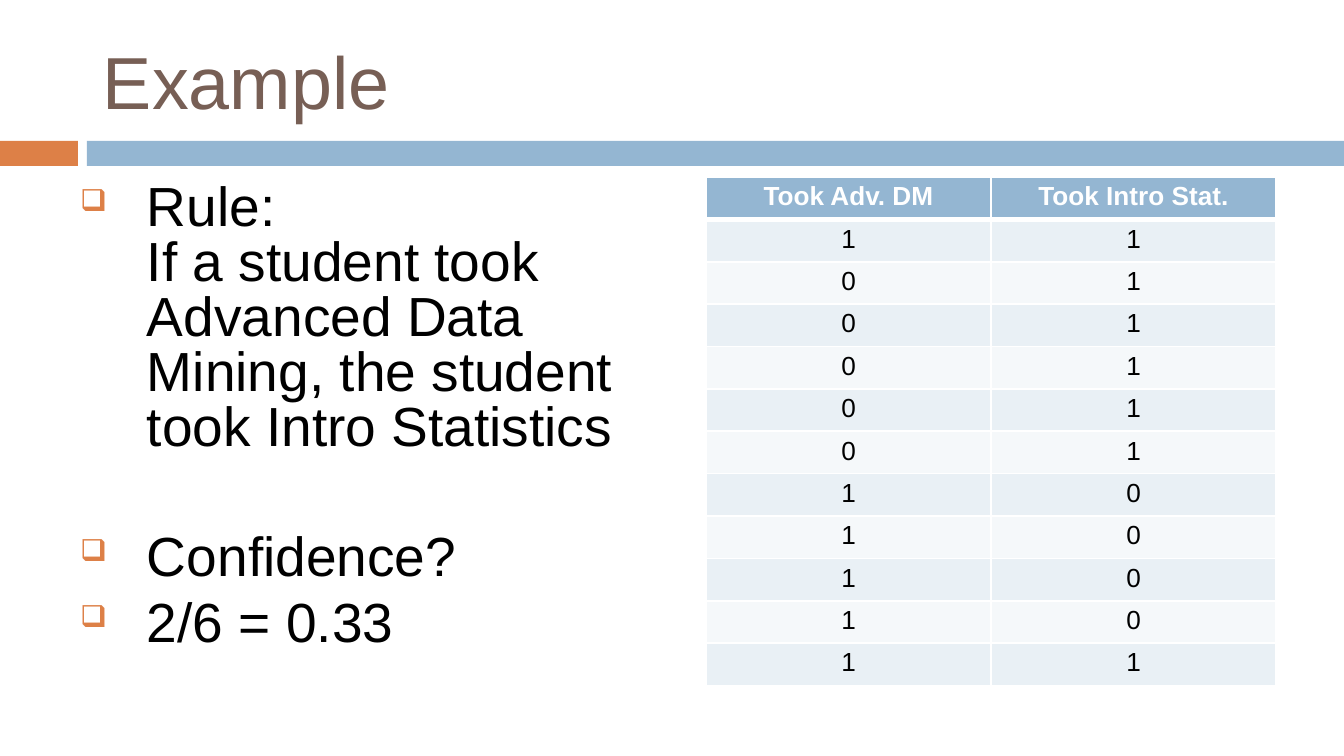
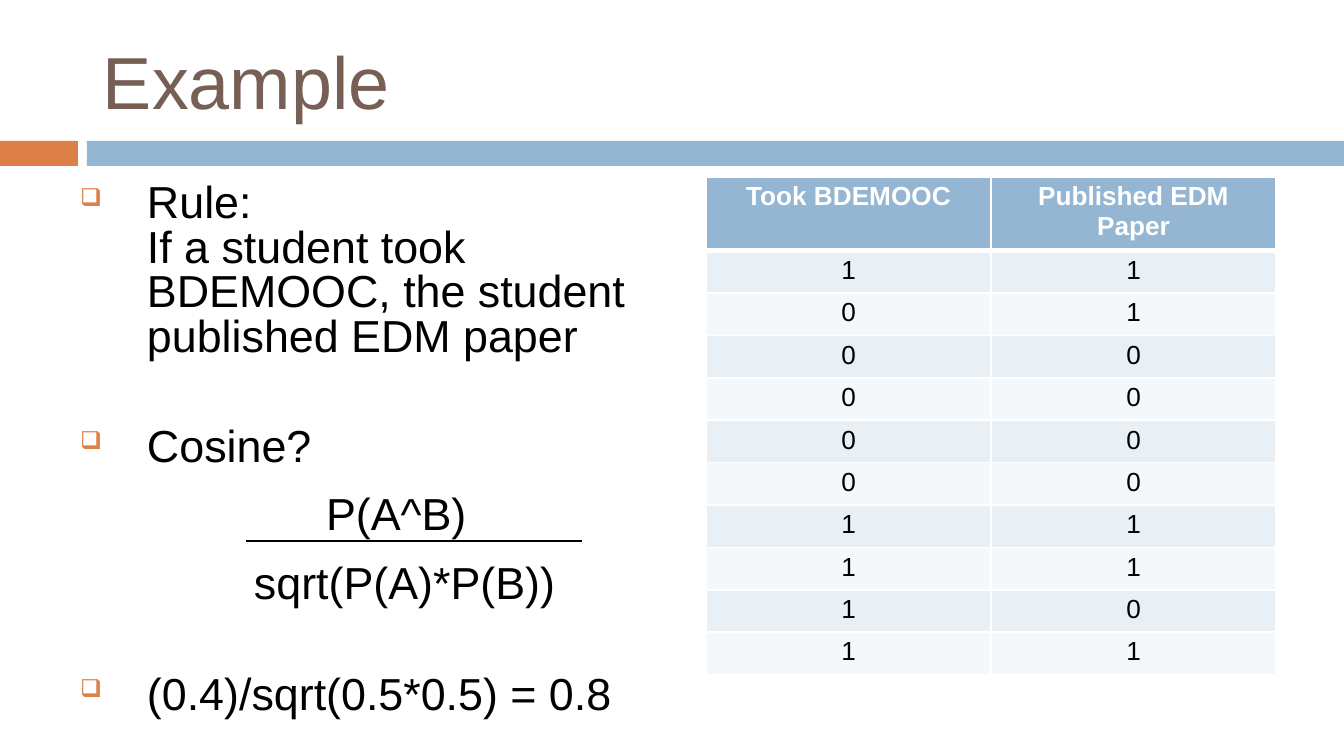
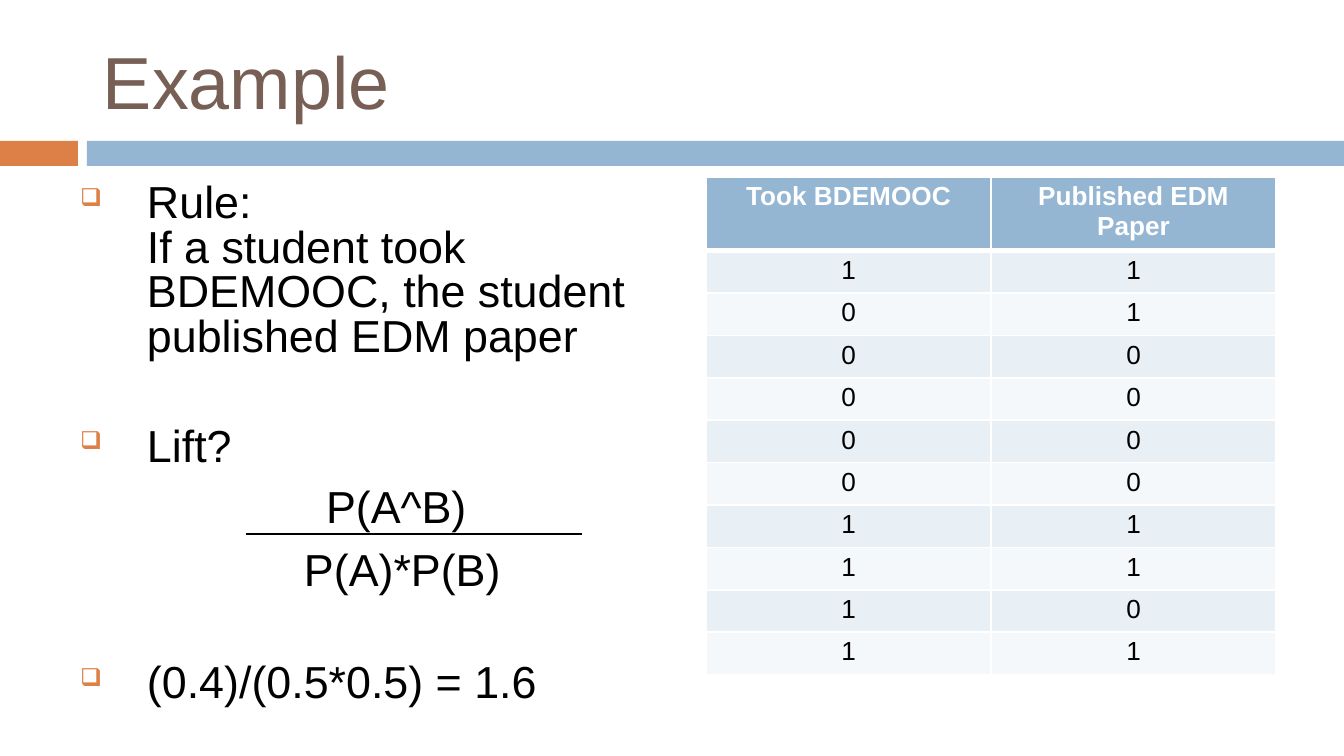
import lxml.etree
import pptx
import pptx.dml.color
import pptx.enum.shapes
import pptx.enum.text
import pptx.oxml.ns
import pptx.util

SCALE = 914400 / 134.4
FONT = "Arial"
BLUE, ORANGE, BROWN = "94B6D2", "DD8047", "775F55"
WHITE, BLACK = "FFFFFF", "000000"
BANDS = ("F5F8FA", "E9F0F5")
LEAD = 0.83
TEXT_PAD = (13, 7)
CELL_PAD = (13, 5, 13, 6)

COURSES = [(1, 1)] + [(0, 1)] * 5 + [(1, 0)] * 4 + [(1, 1)]
PAPERS = [(1, 1), (0, 1)] + [(0, 0)] * 4 + [(1, 1), (1, 1), (1, 0), (1, 1)]
PAPER_HEAD = ("Took BDEMOOC", "Published EDM Paper")
PAPER_RULE = "Rule:\nIf a student took BDEMOOC, the student published EDM paper"


def px(n):
    return pptx.util.Emu(round(n * SCALE))


def rgb(code):
    return pptx.dml.color.RGBColor.from_string(code)


def add_xml(parent, tag, **attrs):
    return lxml.etree.SubElement(parent, pptx.oxml.ns.qn(tag), attrs)


def write(para, text, size=24, color=BLACK, bold=False, center=False,
          lead=None, before=0, left=0, bullet=False):
    """Fill a paragraph; before and left are in px."""
    para.text = text
    para.space_before = px(before)
    if lead:
        para.line_spacing = lead
    if center:
        para.alignment = pptx.enum.text.PP_ALIGN.CENTER
    for run in para.runs:
        run.font.name = FONT
        run.font.size = pptx.util.Pt(size)
        run.font.bold = bold
        run.font.color.rgb = rgb(color)
    props = para._p.get_or_add_pPr()
    props.set("marL", str(px(left)))
    props.set("indent", str(px(-left if bullet else 0)))
    if bullet:
        add_xml(add_xml(props, "a:buClr"), "a:srgbClr", val=ORANGE)
        add_xml(props, "a:buSzPct", val="55000")
        add_xml(props, "a:buChar", char="❑")


def add_text(slide, box, items, middle=False):
    """Add a text box with one paragraph for each (text, format) item."""
    frame = slide.shapes.add_textbox(*map(px, box)).text_frame
    frame.word_wrap = True
    frame.margin_left = frame.margin_right = px(TEXT_PAD[0])
    frame.margin_top = frame.margin_bottom = px(TEXT_PAD[1])
    if middle:
        frame.vertical_anchor = pptx.enum.text.MSO_ANCHOR.MIDDLE
    for i, (text, style) in enumerate(items):
        para = frame.add_paragraph() if i else frame.paragraphs[0]
        write(para, text, **style)


def add_band(slide, box, color):
    kind = pptx.enum.shapes.MSO_SHAPE.RECTANGLE
    band = slide.shapes.add_shape(kind, *map(px, box))
    band.shadow.inherit = False
    band.fill.solid()
    band.fill.fore_color.rgb = rgb(color)
    band.line.fill.background()


def add_page(deck, title):
    """Add a slide with the shared bands and title."""
    slide = deck.slides.add_slide(deck.slide_layouts[6])
    add_band(slide, (0, 141, 78, 25), ORANGE)
    add_band(slide, (87, 141, 1257, 25), BLUE)
    style = dict(size=39.5, color=BROWN)
    add_text(slide, (90, 26, 1199, 109), [(title, style)], middle=True)
    return slide


def add_edge(cell, tag, width):
    edge = add_xml(cell._tc.get_or_add_tcPr(), tag,
                   w=str(pptx.util.Pt(width)))
    add_xml(add_xml(edge, "a:solidFill"), "a:srgbClr", val=WHITE)


def fill_cell(cell, text, row):
    head = row == 0
    (cell.margin_left, cell.margin_top,
     cell.margin_right, cell.margin_bottom) = map(px, CELL_PAD)
    add_edge(cell, "a:lnL", 1)
    add_edge(cell, "a:lnR", 1)
    if head:
        add_edge(cell, "a:lnT", 1)
    add_edge(cell, "a:lnB", 3 if head else 1)
    cell.fill.solid()
    cell.fill.fore_color.rgb = rgb(BLUE if head else BANDS[row % 2])
    write(cell.text_frame.paragraphs[0], text, size=14, bold=head,
          color=WHITE if head else BLACK, center=True)


def add_data(slide, box, head, pairs):
    """Add a table; the box is left, top, column width, row height."""
    left, top, wide, high = box
    rows = [head] + pairs
    table = slide.shapes.add_table(
        len(rows), len(head), px(left), px(top),
        px(wide * len(head)), px(high * len(rows))).table
    for col in table.columns:
        col.width = px(wide)
    for r, values in enumerate(rows):
        table.rows[r].height = px(high)
        for c, value in enumerate(values):
            fill_cell(table.cell(r, c), str(value), r)


def add_rule(slide, left, top, width):
    kind = pptx.enum.shapes.MSO_CONNECTOR.STRAIGHT
    rule = slide.shapes.add_connector(
        kind, px(left), px(top), px(left + width), px(top))
    rule.line.color.rgb = rgb(BLACK)
    rule.line.width = pptx.util.Pt(0.75)
    add_xml(rule._element.spPr, "a:effectLst")


def point(text, size, before=0):
    """Return a bulleted item for add_text."""
    return text, dict(size=size, before=before, left=67, lead=LEAD,
                      bullet=True)


def add_course(deck, box, grid):
    slide = add_page(deck, "Example")
    add_data(slide, grid, ("Took Adv. DM", "Took Intro Stat."), COURSES)
    rule = ("Rule:\nIf a student took Advanced Data Mining, "
            "the student took Intro Statistics")
    add_text(slide, box, [point(rule, 29.5),
                          point("Confidence?", 29.5, 75),
                          point("2/6 = 0.33", 29.5, 11)])


def add_paper(deck, box, grid, name, below, left, answer, lead, gap, drop):
    """Add a measure slide; drop is the fraction bar's depth in the box."""
    slide = add_page(deck, "Example")
    add_data(slide, grid, PAPER_HEAD, PAPERS)
    part = dict(lead=lead, before=gap)
    add_text(slide, box, [point(PAPER_RULE, 24),
                          point(name, 24, 65),
                          ("P(A^B)", dict(part, left=246)),
                          (below, dict(part, left=left)),
                          point(answer, 24, 66)])
    add_rule(slide, box[0] + 179, box[1] + drop, 336)


def main():
    deck = pptx.Presentation()
    deck.slide_width, deck.slide_height = px(1344), px(756)
    grid = (706, 177, 285, 41)
    box = (67, 176, 638, 579)
    add_course(deck, (67, 176, 582, 499), grid)
    add_paper(deck, box, grid, "Cosine?", "sqrt(P(A)*P(B))", 174,
              "(0.4)/sqrt(0.5*0.5) = 0.8", lead=1.0, gap=15, drop=365)
    add_paper(deck, box, grid, "Lift?", "P(A)*P(B)", 224,
              "(0.4)/(0.5*0.5) = 1.6", lead=0.93, gap=13, drop=358)
    deck.save("out.pptx")


if __name__ == "__main__":
    main()
